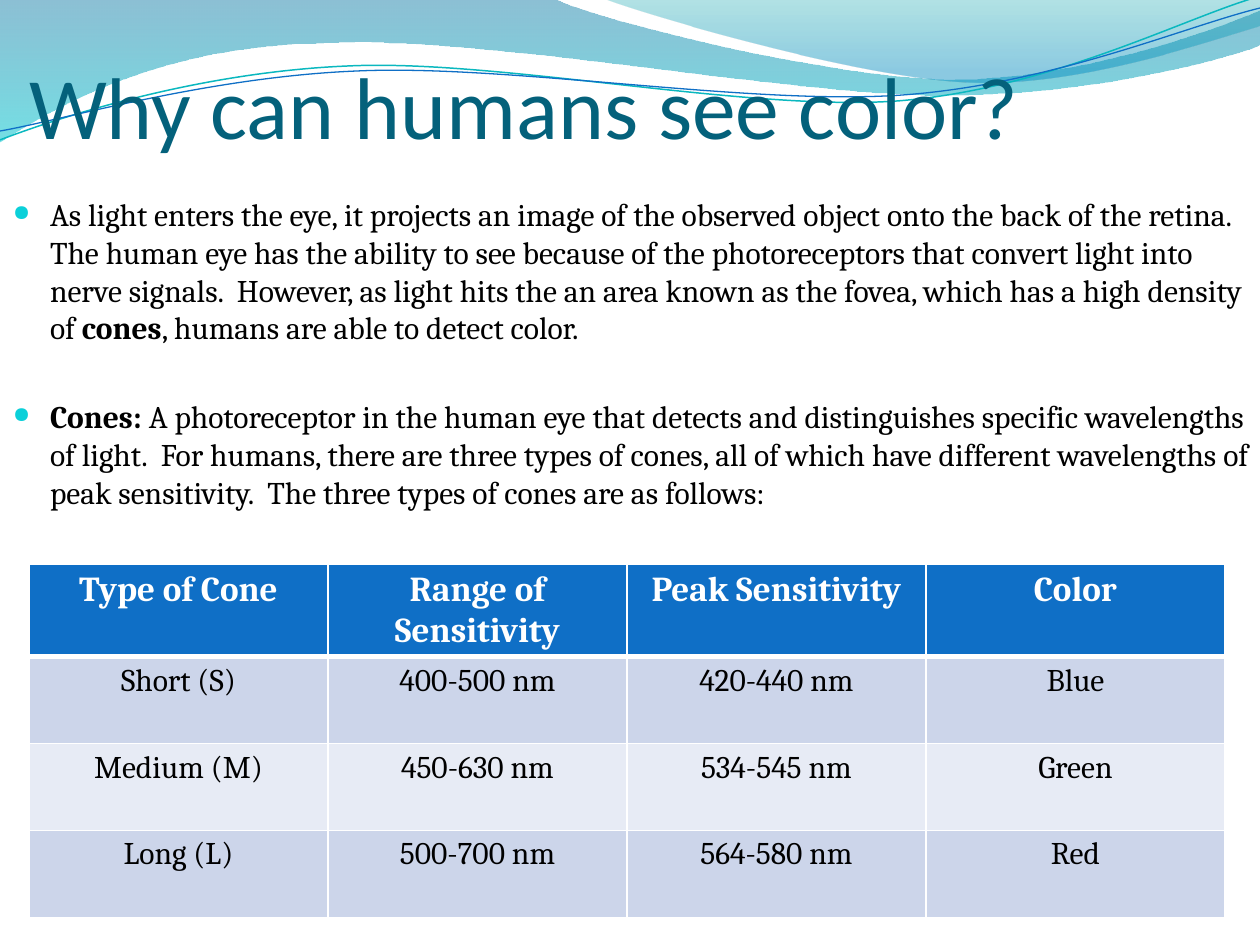
"""Build a slide on why humans see color, with wave artwork and a table of cones."""
import math
from dataclasses import dataclass

from lxml import etree
from pptx import Presentation
from pptx import util as u
from pptx.dml.color import RGBColor
from pptx.enum import text
from pptx.oxml import ns

PX = 914400 / 126


@dataclass(frozen=True)
class Theme:
    heading_font: str = "Calibri"
    body_font: str = "Cambria"
    title: str = "04617B"
    ink: str = "000000"
    white: str = "FFFFFF"
    accent: str = "0F6FC6"
    bullet: str = "0BD0D9"
    teal: str = "0AB8BF"
    bands: tuple = ("CCD5EA", "E7EBF5")
    title_size: int = 50
    header_size: int = 20
    body_size: int = 18


theme = Theme()


def px(value):
    return u.Emu(round(value * PX))


def add_span(para, words, size=theme.body_size, font=theme.body_font, color=theme.ink, bold=False):
    span = para.add_run()
    span.text = words
    span.font.size = u.Pt(size)
    span.font.name = font
    span.font.bold = bold
    span.font.color.rgb = RGBColor.from_string(color)


deck = Presentation()
deck.slide_width, deck.slide_height = px(1260), px(945)
page = deck.slides.add_slide(deck.slide_layouts[5])

# Each wave: start point, segments (2 values for a line, 6 for a curve), gradient stops, line
waves = [
    ((0, 0), [(554, -1), (600, 21, 837, 79, 955, 79), (1075, 79, 1207, 33, 1260, 11), (1261, 45),
              (1239, 55, 1096, 96, 940, 95), (784, 95, 481, 35, 324, 43), (163, 45, 58, 105, -1, 142), (0, 0)],
     [(0, "0074A1", 45), (1, "00C6CF", 55)], None),
    ((604, -1), [(641, 14, 859, 78, 969, 82), (1079, 87, 1211, 40, 1260, 26), (1260, 0), (604, -1)],
     [(0, "00A1A9", 30), (0.8, "008BBF", 45)], None),
    ((0, 140), [(60, 117, 199, 72, 349, 66), (498, 59, 747, 112, 898, 101), (1050, 89, 1182, 19, 1257, -3)],
     None, (theme.teal, 0.85)),
    ((0, 131), [(59, 121, 207, 77, 357, 71), (508, 64, 752, 106, 903, 95), (1053, 84, 1186, 26, 1260, 8)],
     None, (theme.accent, 0.75)),
]
for start, segments, stops, stroke in waves:
    tilt = 0 if stops else 2.7
    cos, sin = math.cos(math.radians(tilt)), math.sin(math.radians(tilt))
    points = [start] + [pair for segment in segments for pair in zip(segment[::2], segment[1::2])]
    middle_x, middle_y = 629, 73
    outline = [(px(middle_x + (x - middle_x) * cos - (y - middle_y) * sin),
                px(middle_y + (x - middle_x) * sin + (y - middle_y) * cos)) for x, y in points]
    builder = page.shapes.build_freeform(*outline[0], scale=1.0)
    builder.add_line_segments(outline[1:], close=stops is not None)
    wave = builder.convert_to_shape()
    wave.rotation = -tilt
    wave.shadow.inherit = False
    steps = iter(list(wave.element.iter(ns.qn("a:lnTo"))))
    for segment in segments:
        first = next(steps)
        if len(segment) == 6:
            first.tag = ns.qn("a:cubicBezTo")
            for follower in (next(steps), next(steps)):
                first.append(follower[0])
                follower.getparent().remove(follower)
    if stops:
        wave.line.fill.background()
        wave.fill.gradient()
        wave.fill.gradient_angle = 270
        for stop, (position, color, opacity) in zip(wave.fill.gradient_stops, stops):
            stop.position = position
            stop.color.rgb = RGBColor.from_string(color)
        for tint, (position, color, opacity) in zip(wave.element.iter(ns.qn("a:srgbClr")), stops):
            etree.SubElement(tint, ns.qn("a:alpha"), val=str(opacity * 1000))
    else:
        wave.fill.background()
        wave.line.color.rgb = RGBColor.from_string(stroke[0])
        wave.line.width = u.Pt(stroke[1])

title = page.shapes.title
title.element.getparent().append(title.element)
title.left, title.top, title.width, title.height = px(29), px(0), px(1197), px(157)
frame = title.text_frame
frame.auto_size = text.MSO_AUTO_SIZE.NONE
frame.vertical_anchor = text.MSO_ANCHOR.BOTTOM
frame.margin_left = frame.margin_right = frame.margin_bottom = 0
frame.margin_top = px(6)
frame.paragraphs[0].alignment = text.PP_ALIGN.LEFT
add_span(frame.paragraphs[0], "Why can humans see color?", size=theme.title_size,
         font=theme.heading_font, color=theme.title)

body = page.shapes.add_textbox(px(0), px(195), px(1264), px(321))
frame = body.text_frame
frame.word_wrap = True
frame.margin_left = frame.margin_right = px(13)
frame.margin_top, frame.margin_bottom = 0, px(6)
bullets = [
    [("As light enters the eye, it projects an image of the observed object onto the back of the retina.  "
      "The human eye has the ability to see because of the photoreceptors that convert light into nerve "
      "signals.  However, as light hits the an area known as the fovea, which has a high density of ", False),
     ("cones", True), (", humans are able to detect color.", False)],
    [("Cones: ", True),
     ("A photoreceptor in the human eye that detects and distinguishes specific wavelengths of light.  "
      "For humans, there are three types of cones, all of which have different wavelengths of peak "
      "sensitivity.  The three types of cones are as follows:", False)],
]
for index, spans in enumerate(bullets):
    para = frame.add_paragraph() if index else frame.paragraphs[0]
    para.space_before = u.Pt(29 if index else 3.6)
    layout = para._p.get_or_add_pPr()
    layout.set("marL", str(px(37)))
    layout.set("indent", str(px(-37)))
    bullet_color = etree.SubElement(layout, ns.qn("a:buClr"))
    etree.SubElement(bullet_color, ns.qn("a:srgbClr"), val=theme.bullet)
    etree.SubElement(layout, ns.qn("a:buSzPct"), val="70000")
    etree.SubElement(layout, ns.qn("a:buChar"), char="●")
    for words, bold in spans:
        add_span(para, words, bold=bold)

rows = [
    ("Type of Cone", "Range of Sensitivity", "Peak Sensitivity", "Color"),
    ("Short (S)", "400-500 nm", "420-440 nm", "Blue"),
    ("Medium (M)", "450-630 nm", "534-545 nm", "Green"),
    ("Long (L)", "500-700 nm", "564-580 nm", "Red"),
]
table = page.shapes.add_table(4, 4, px(29), px(564), px(1196), px(348)).table
for r, values in enumerate(rows):
    table.rows[r].height = px(87)
    for c, words in enumerate(values):
        cell = table.cell(r, c)
        cell.margin_bottom = px(6 if r else 2)
        cell.fill.solid()
        cell.fill.fore_color.rgb = RGBColor.from_string(theme.bands[(r - 1) % 2] if r else theme.accent)
        para = cell.text_frame.paragraphs[0]
        para.alignment = text.PP_ALIGN.CENTER
        add_span(para, words, size=theme.body_size if r else theme.header_size,
                 color=theme.ink if r else theme.white, bold=r == 0)
        for place, side in enumerate("LRTB"):
            heavy = (r, side) in ((0, "B"), (1, "T"))
            border = etree.Element(ns.qn(f"a:ln{side}"), w=str(u.Pt(3 if heavy else 1)))
            fill = etree.SubElement(border, ns.qn("a:solidFill"))
            etree.SubElement(fill, ns.qn("a:srgbClr"), val=theme.white)
            cell._tc.get_or_add_tcPr().insert(place, border)

deck.save("out.pptx")
